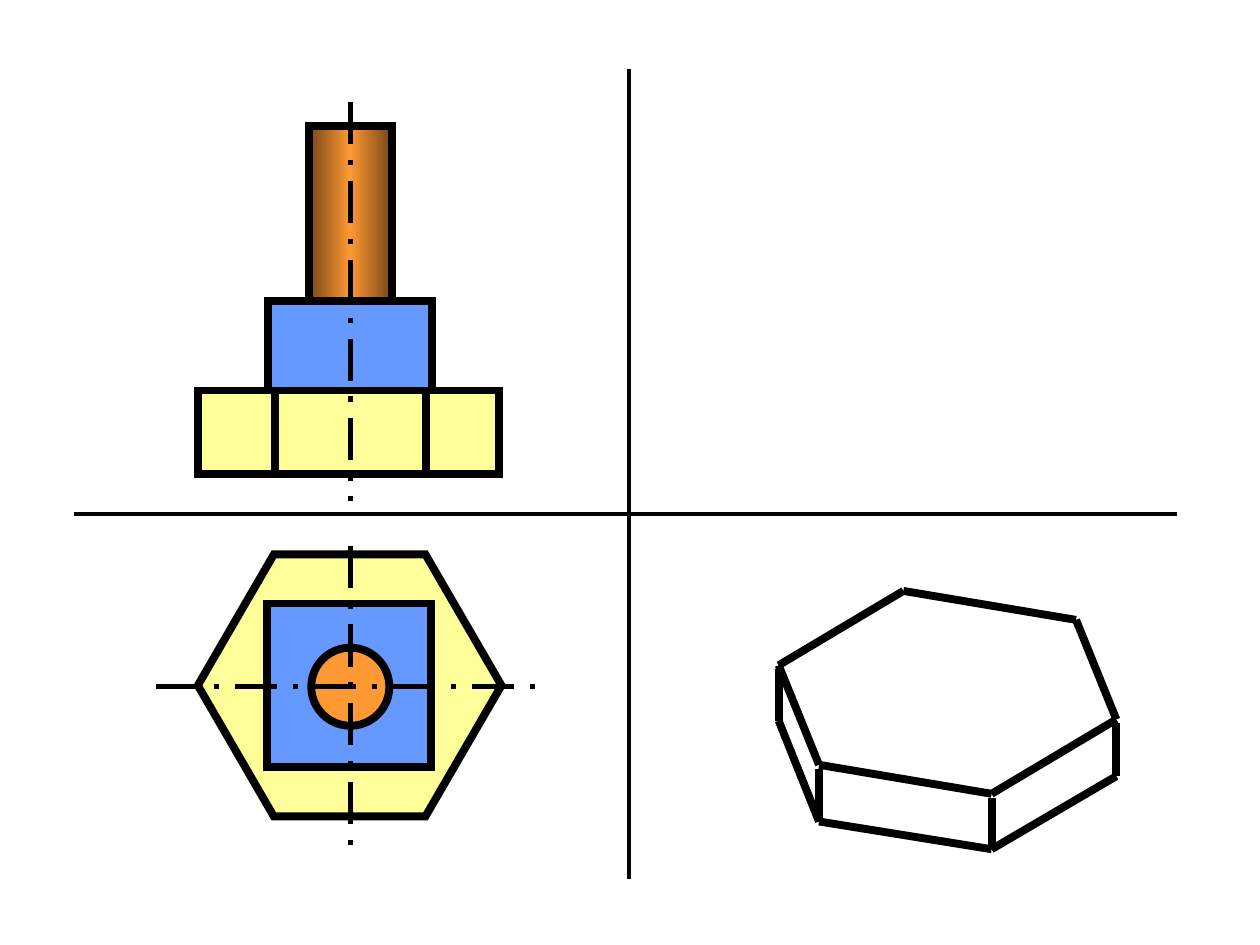
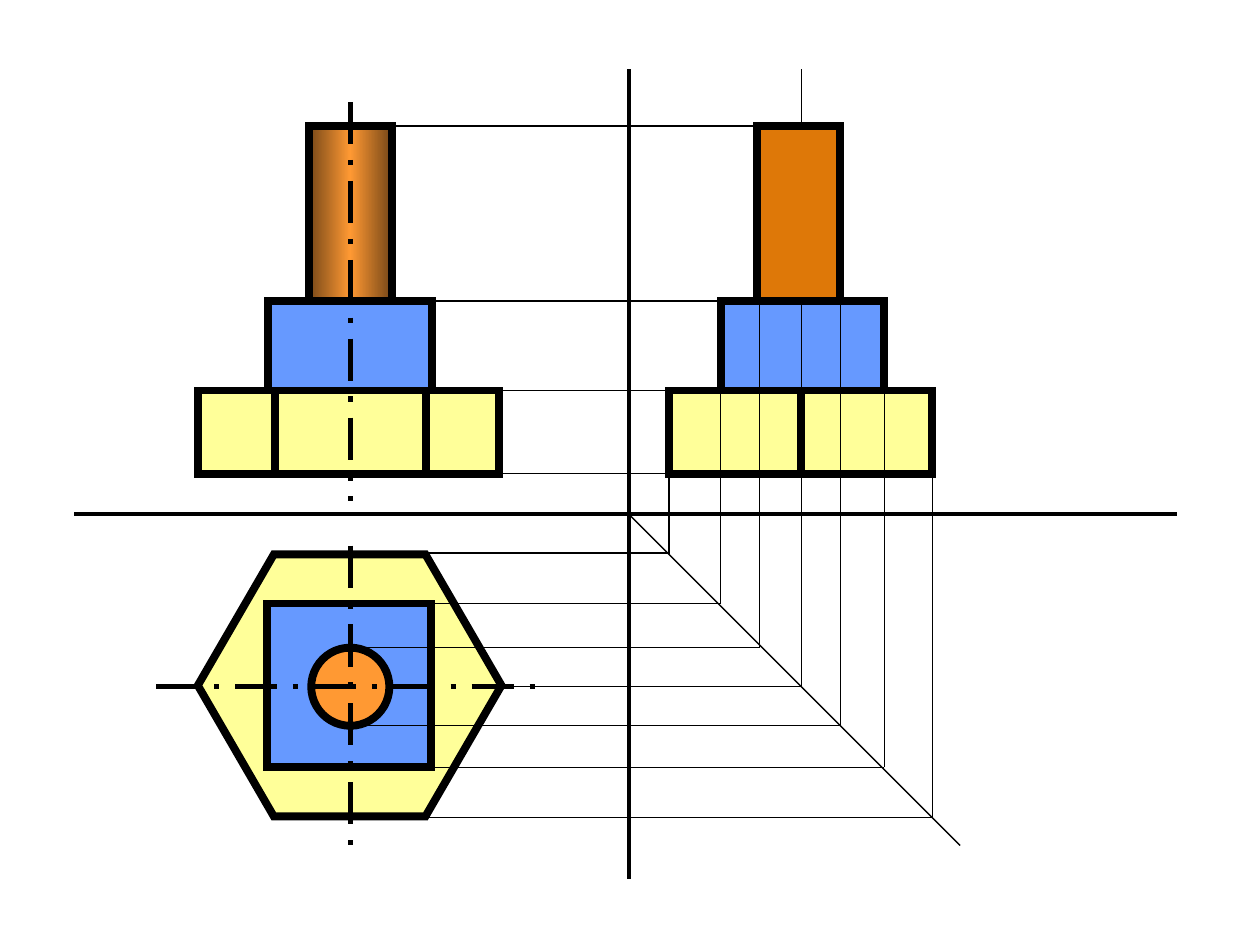
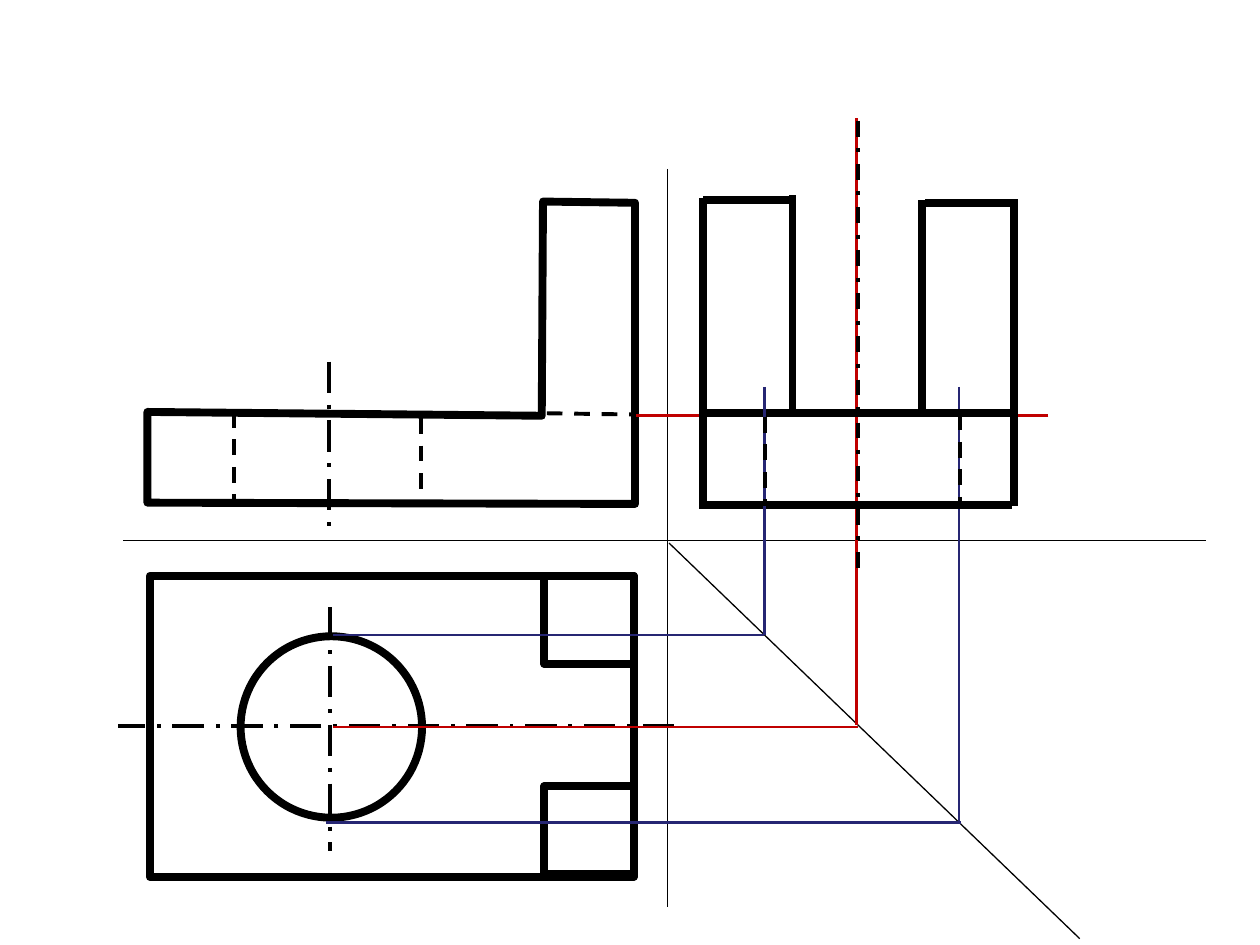
from copy import deepcopy

from lxml import etree
from pptx import Presentation
from pptx.dml.color import RGBColor
from pptx.enum.dml import MSO_LINE
from pptx.enum.shapes import MSO_CONNECTOR, MSO_SHAPE
from pptx.oxml.ns import qn
from pptx.util import Inches, Pt

BLACK = RGBColor(0x00, 0x00, 0x00)
WHITE = RGBColor(0xFF, 0xFF, 0xFF)
BLUE = RGBColor(0x66, 0x99, 0xFF)
YELLOW = RGBColor(0xFF, 0xFF, 0x99)
ORANGE = RGBColor(0xFF, 0x99, 0x33)
BROWN = RGBColor(0x76, 0x47, 0x18)
DARK_ORANGE = RGBColor(0xDE, 0x78, 0x08)
RED = RGBColor(0xC0, 0x00, 0x00)
NAVY = RGBColor(0x26, 0x26, 0x73)

RECTANGLE = MSO_SHAPE.RECTANGLE
ELLIPSE = MSO_SHAPE.OVAL
HEXAGON = MSO_SHAPE.HEXAGON
STRAIGHT = MSO_CONNECTOR.STRAIGHT
DASH = MSO_LINE.DASH
DASH_DOT = MSO_LINE.DASH_DOT
LONG_DASH_DOT = MSO_LINE.LONG_DASH_DOT

OUTLINE = 4.5
CENTRE = 3
MEDIUM = 2.25
PROJECTION = 1.5
THIN = 0.75
BLANK_LAYOUT = 6


class Drawing:
    def __init__(self):
        self.presentation = Presentation()
        self.presentation.slide_width = Inches(10)
        self.presentation.slide_height = Inches(7.5)
        self.slide = None
        self.join = "miter"

    def new_slide(self, join):
        layout = self.presentation.slide_layouts[BLANK_LAYOUT]
        self.slide = self.presentation.slides.add_slide(layout)
        self.slide.background.fill.solid()
        self.slide.background.fill.fore_color.rgb = WHITE
        self.join = join

    def outline(self, shape, fill):
        shape.shadow.inherit = False
        if fill is None:
            shape.fill.background()
        else:
            shape.fill.solid()
            shape.fill.fore_color.rgb = fill
        shape.line.color.rgb = BLACK
        shape.line.width = Pt(OUTLINE)
        line = shape._element.spPr.find(qn("a:ln"))
        etree.SubElement(line, qn(f"a:{self.join}"))

    def shape(self, kind, left, top, width, height, fill=None):
        box = [Inches(value) for value in (left, top, width, height)]
        shape = self.slide.shapes.add_shape(kind, *box)
        self.outline(shape, fill)
        return shape

    def cylinder(self, left, top, width, height):
        shape = self.shape(RECTANGLE, left, top, width, height)
        shape.fill.gradient()
        shape.fill.gradient_angle = 0
        stop_list = shape._element.spPr.find(qn("a:gradFill")).find(qn("a:gsLst"))
        stop_list.insert(1, deepcopy(stop_list[0]))
        stops = zip(shape.fill.gradient_stops, (0, 0.5, 1), (BROWN, ORANGE, BROWN))
        for stop, position, color in stops:
            stop.position = position
            stop.color.rgb = color

    def polygon(self, points):
        corners = [(Inches(x), Inches(y)) for x, y in points]
        builder = self.slide.shapes.build_freeform(*corners[0])
        builder.add_line_segments(corners[1:], close=True)
        self.outline(builder.convert_to_shape(), None)

    def line(self, start, end, width=OUTLINE, color=BLACK, dash=None):
        ends = [Inches(value) for value in (*start, *end)]
        connector = self.slide.shapes.add_connector(STRAIGHT, *ends)
        connector.line.color.rgb = color
        connector.line.width = Pt(width)
        if dash is not None:
            connector.line.dash_style = dash
        etree.SubElement(connector._element.spPr, qn("a:effectLst"))

    def lines(self, segments, width=OUTLINE, color=BLACK, dash=None):
        for x1, y1, x2, y2 in segments:
            self.line((x1, y1), (x2, y2), width, color, dash)

    def chain(self, points):
        for start, end in zip(points, points[1:]):
            self.line(start, end)


def draw_bolt_views(drawing):
    drawing.shape(RECTANGLE, 2.13, 2.39, 1.3, 0.71, BLUE)
    drawing.shape(RECTANGLE, 1.57, 3.1, 2.39, 0.66, YELLOW)
    head = drawing.shape(HEXAGON, 1.57, 4.4, 2.41, 2.08, YELLOW)
    head.adjustments[0] = 0.29
    drawing.shape(RECTANGLE, 2.12, 4.79, 1.3, 1.3, BLUE)
    drawing.shape(ELLIPSE, 2.47, 5.14, 0.62, 0.62, ORANGE)
    drawing.lines([(1.24, 5.45, 4.3, 5.45), (2.78, 4.33, 2.78, 6.78)],
                  CENTRE, dash=LONG_DASH_DOT)
    drawing.cylinder(2.45, 1, 0.66, 1.39)
    drawing.line((2.78, 0.81), (2.78, 3.98), CENTRE, dash=LONG_DASH_DOT)
    drawing.lines([(x, 3.1, x, 3.75) for x in (2.18, 3.38)])
    drawing.lines([(0.59, 4.08, 9.34, 4.08), (4.99, 0.55, 4.99, 6.98)], MEDIUM)


def draw_hexagonal_prism(drawing):
    front = [(6.18, 5.28), (6.5, 6.07), (7.87, 6.3), (8.86, 5.71)]
    back = [(8.54, 4.92), (7.17, 4.69)]
    base = [(6.18, 5.72), (6.5, 6.52), (7.87, 6.74), (8.86, 6.16)]
    drawing.chain(front + back + front[:1])
    drawing.chain(base)
    for (x, y), bottom in zip(front, base):
        drawing.line((x, y + 0.03), bottom)


def draw_bolt_side_view(drawing):
    def project(rows, columns):
        drawing.lines([(x1, y, x2, y) for x1, x2, y in rows], THIN)
        drawing.lines([(x, y1, x, y2) for x, y1, y2 in columns], THIN)

    project([(2.78, 5.32, 4.39), (3.09, 7.4, 6.49), (2.78, 7.4, 3.1), (3.97, 7.4, 3.76)],
            [(5.31, 4.4, 3.1), (6.36, 5.45, 3.1), (7.4, 6.49, 3.1)])
    drawing.line((4.99, 4.08), (7.62, 6.71), THIN)
    drawing.shape(RECTANGLE, 5.31, 3.1, 2.09, 0.66, YELLOW)
    drawing.line((6.36, 3.1), (6.36, 3.74))
    project([(3.38, 5.72, 4.79), (2.78, 7.02, 6.09), (3.38, 7.02, 2.39)],
            [(5.72, 4.79, 2.39), (7.02, 6.09, 2.39)])
    drawing.shape(RECTANGLE, 5.72, 2.39, 1.3, 0.71, BLUE)
    project([(2.78, 6.03, 5.14), (2.78, 6.67, 5.76), (3.98, 6.36, 5.45), (2.78, 6.67, 1)],
            [(6.03, 5.14, 1), (6.36, 5.45, 0.55), (6.67, 5.76, 1)])
    drawing.shape(RECTANGLE, 6.01, 1, 0.66, 1.39, DARK_ORANGE)


def draw_bracket_views(drawing):
    drawing.polygon([(1.17, 3.27), (4.3, 3.3), (4.31, 1.6), (5.04, 1.61),
                     (5.04, 4), (1.17, 3.99)])
    drawing.shape(RECTANGLE, 1.19, 4.57, 3.84, 2.39)
    for top in (4.57, 6.24):
        drawing.shape(RECTANGLE, 4.32, top, 0.71, 0.7)
    drawing.shape(ELLIPSE, 1.91, 5.05, 1.44, 1.44)
    drawing.lines([(1.86, 3.27, 1.86, 3.97), (3.34, 3.32, 3.34, 4.02),
                   (4.34, 3.28, 5.04, 3.29)], MEDIUM, dash=DASH)
    drawing.lines([(2.62, 4.82, 2.62, 6.75), (2.61, 2.87, 2.61, 4.25),
                   (5.35, 5.76, 0.94, 5.76)], MEDIUM, dash=LONG_DASH_DOT)
    drawing.lines([(5.3, 1.34, 5.3, 7.2), (0.98, 4.29, 9.57, 4.29),
                   (5.31, 4.31, 8.57, 7.45)], THIN)


def draw_bracket_side_view(drawing):
    drawing.lines([(6.81, 5.77, 2.64, 5.77), (6.8, 0.94, 6.8, 5.75),
                   (8.32, 3.3, 5.05, 3.3)], PROJECTION, RED)
    drawing.lines([(7.63, 6.53, 2.59, 6.53), (7.61, 3.07, 7.61, 6.54)],
                  PROJECTION, NAVY)
    drawing.lines([(6.29, 1.59, 5.58, 1.59), (8.05, 3.28, 5.57, 3.28),
                   (5.58, 1.57, 5.58, 4.01), (8.05, 1.58, 8.05, 4.02),
                   (8.03, 4.01, 5.55, 4.01), (6.29, 1.55, 6.29, 3.29),
                   (7.32, 1.59, 7.32, 3.29), (8.04, 1.61, 7.34, 1.61)])
    drawing.lines([(6.06, 5.04, 2.64, 5.04), (6.07, 3.07, 6.07, 5.04)],
                  PROJECTION, NAVY)
    drawing.lines([(6.07, 3.31, 6.07, 4.02), (7.62, 3.29, 7.62, 3.99)],
                  MEDIUM, dash=DASH)
    drawing.line((6.81, 0.96), (6.81, 4.54), MEDIUM, dash=DASH_DOT)


def main():
    drawing = Drawing()
    for draw_addition in (draw_hexagonal_prism, draw_bolt_side_view):
        drawing.new_slide("miter")
        draw_bolt_views(drawing)
        draw_addition(drawing)
    drawing.new_slide("round")
    draw_bracket_views(drawing)
    draw_bracket_side_view(drawing)
    drawing.presentation.save("out.pptx")


if __name__ == "__main__":
    main()
